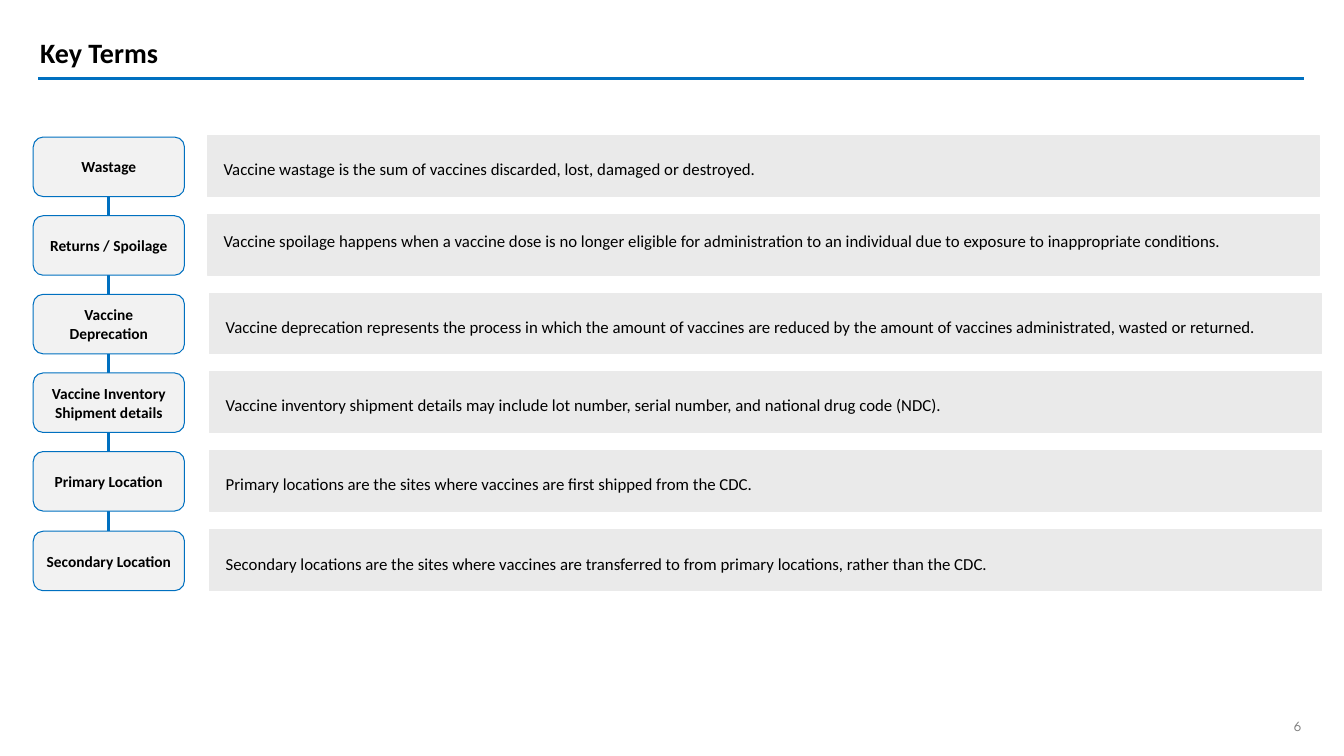
from lxml import etree
from pptx import Presentation
from pptx import util as u
from pptx.dml.color import RGBColor
from pptx.enum import shapes, text
from pptx.oxml.ns import qn

PX = 9144  # EMU per px, 100 px to the inch
THEME = {
    "blue": RGBColor.from_string("0070C0"),
    "box": RGBColor.from_string("F2F2F2"),
    "bar": RGBColor.from_string("EAEAEA"),
    "ink": RGBColor.from_string("000000"),
    "grey": RGBColor.from_string("808080"),
    "font": "Calibri",
    "number_font": "League Spartan",
    "title": 20, "term": 11, "body": 12, "number": 10,
}

TERMS = [
    ("Wastage",
     "Vaccine wastage is the sum of vaccines discarded, lost, damaged or destroyed."),
    ("Returns / Spoilage",
     "Vaccine spoilage happens when a vaccine dose is no longer eligible for "
     "administration to an individual due to exposure to inappropriate conditions."),
    ("Vaccine Deprecation",
     "Vaccine deprecation represents the process in which the amount of vaccines are "
     "reduced by the amount of vaccines administrated, wasted or returned."),
    ("Vaccine Inventory Shipment details",
     "Vaccine inventory shipment details may include lot number, serial number, "
     "and national drug code (NDC)."),
    ("Primary Location",
     "Primary locations are the sites where vaccines are first shipped from the CDC."),
    ("Secondary Location",
     "Secondary locations are the sites where vaccines are transferred to from "
     "primary locations, rather than the CDC."),
]


def write(sp, words, size, bold=False, color="ink", font="font",
          align=text.PP_ALIGN.LEFT, anchor=text.MSO_ANCHOR.MIDDLE):
    tf = sp.text_frame
    tf.word_wrap = True
    tf.vertical_anchor = anchor
    p = tf.paragraphs[0]
    p.alignment = align
    r = p.add_run()
    r.text = words
    r.font.name = THEME[font]
    r.font.size = u.Pt(THEME[size])
    r.font.bold = bold
    r.font.color.rgb = THEME[color]
    return tf


def add_line(x1, y1, x2, y2):
    line = s.shapes.add_connector(shapes.MSO_CONNECTOR.STRAIGHT,
                                  x1 * PX, y1 * PX, x2 * PX, y2 * PX)
    line.line.color.rgb = THEME["blue"]
    line.line.width = u.Pt(2.25)
    etree.SubElement(line._element.spPr, qn("a:effectLst"))
    return line


prs = Presentation()
prs.slide_width, prs.slide_height = 1333 * PX, 750 * PX
s = prs.slides.add_slide(prs.slide_layouts[6])

# Page number, title and rule
number = s.shapes.add_textbox(1264 * PX, 712 * PX, 46 * PX, 17 * PX)
tf = write(number, "6", "number", color="grey", font="number_font",
           align=text.PP_ALIGN.CENTER)
tf.margin_left = tf.margin_right = tf.margin_top = tf.margin_bottom = 0

title = s.shapes.add_textbox(30 * PX, 12 * PX, 1255 * PX, 79 * PX)
write(title, "Key Terms", "title", bold=True)
add_line(38, 78, 1293, 78)

# Terms on a vertical spine, each with its definition bar
spine = add_line(108, 181, 108, 586)
for i, (term, definition) in enumerate(TERMS):
    top = 136 + i * 391 // 5
    box = s.shapes.add_shape(shapes.MSO_SHAPE.ROUNDED_RECTANGLE,
                             33 * PX, top * PX, 150 * PX, 59 * PX)
    box.shadow.inherit = False
    box.fill.solid()
    box.fill.fore_color.rgb = THEME["box"]
    box.line.color.rgb = THEME["blue"]
    box.line.width = u.Pt(0.75)
    write(box, term, "term", bold=True, align=text.PP_ALIGN.CENTER)

    bar_left = 206 if i < 2 else 208
    group = s.shapes.add_group_shape()
    bar = group.shapes.add_shape(shapes.MSO_SHAPE.RECTANGLE, bar_left * PX,
                                 (top - 1) * PX, 1103 * PX, 60 * PX)
    bar.shadow.inherit = False
    bar.fill.solid()
    bar.fill.fore_color.rgb = THEME["bar"]
    bar.line.color.rgb = THEME["bar"]
    bar.line.width = u.Pt(1)

    text_top = top + (10 if term == "Returns / Spoilage" else 17)
    note = group.shapes.add_textbox((bar_left + 6) * PX, text_top * PX,
                                    1085 * PX, 30 * PX)
    tf = write(note, definition, "body", anchor=text.MSO_ANCHOR.TOP)
    tf.auto_size = text.MSO_AUTO_SIZE.SHAPE_TO_FIT_TEXT

spine.end_connect(box, 2)

prs.save("out.pptx")
